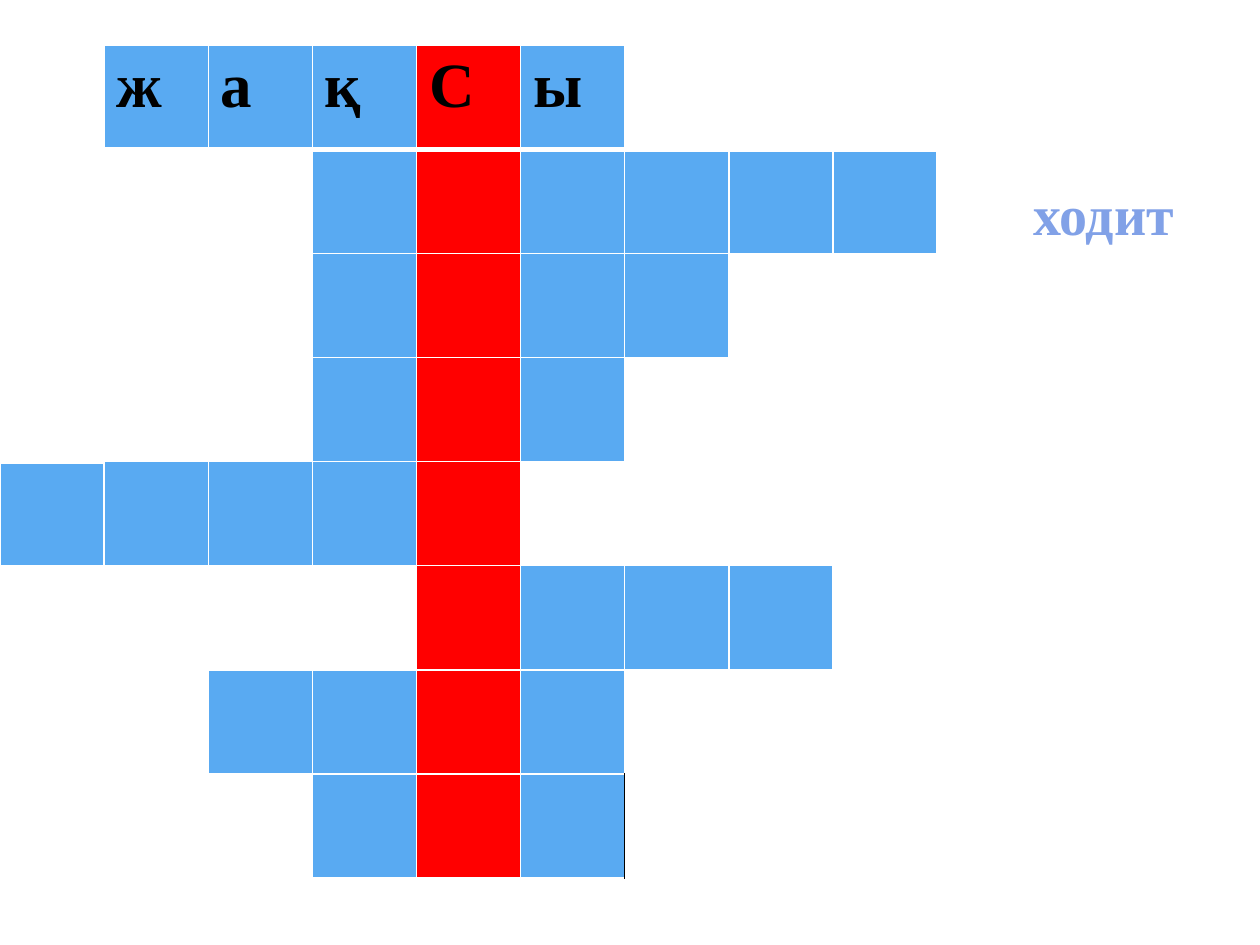
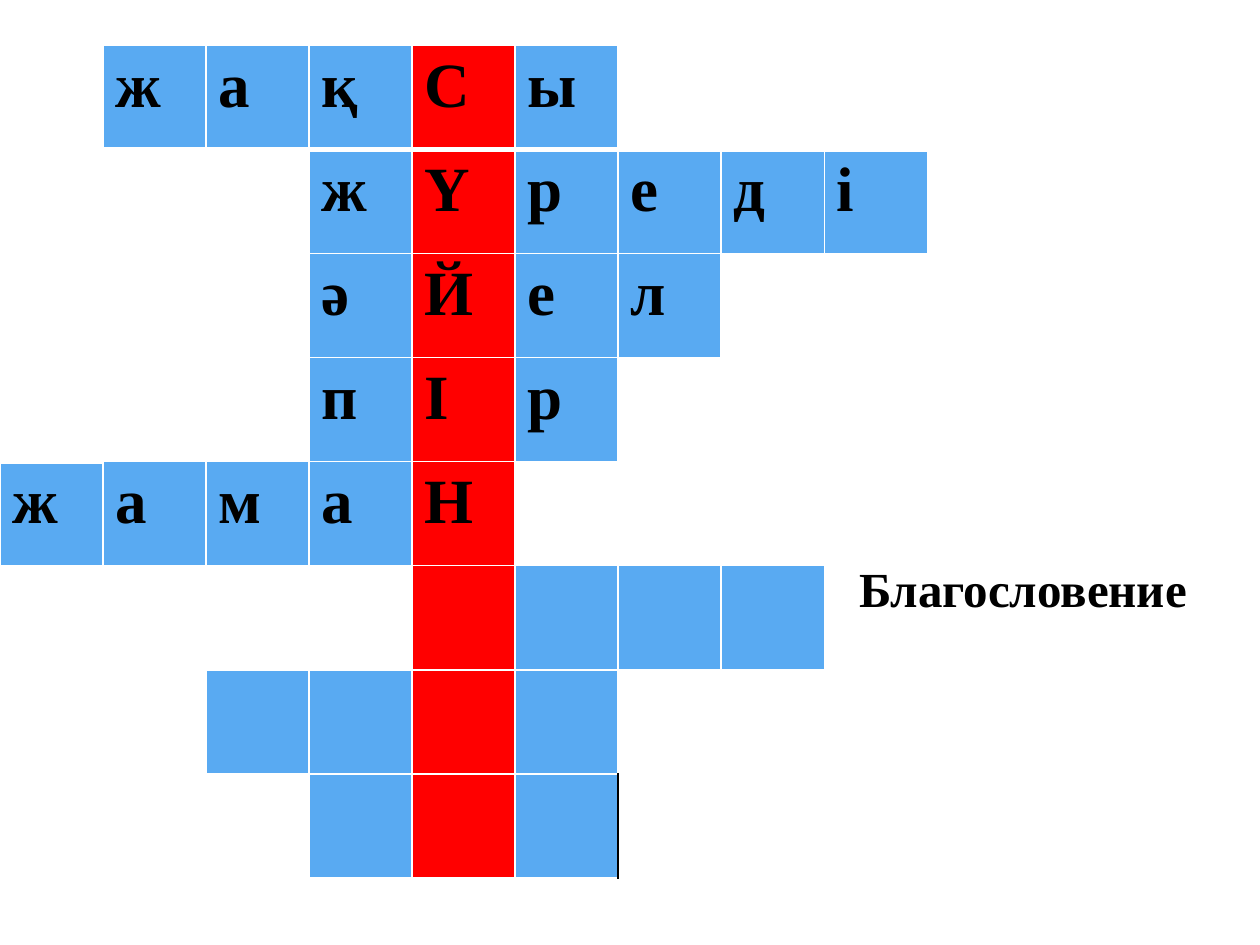
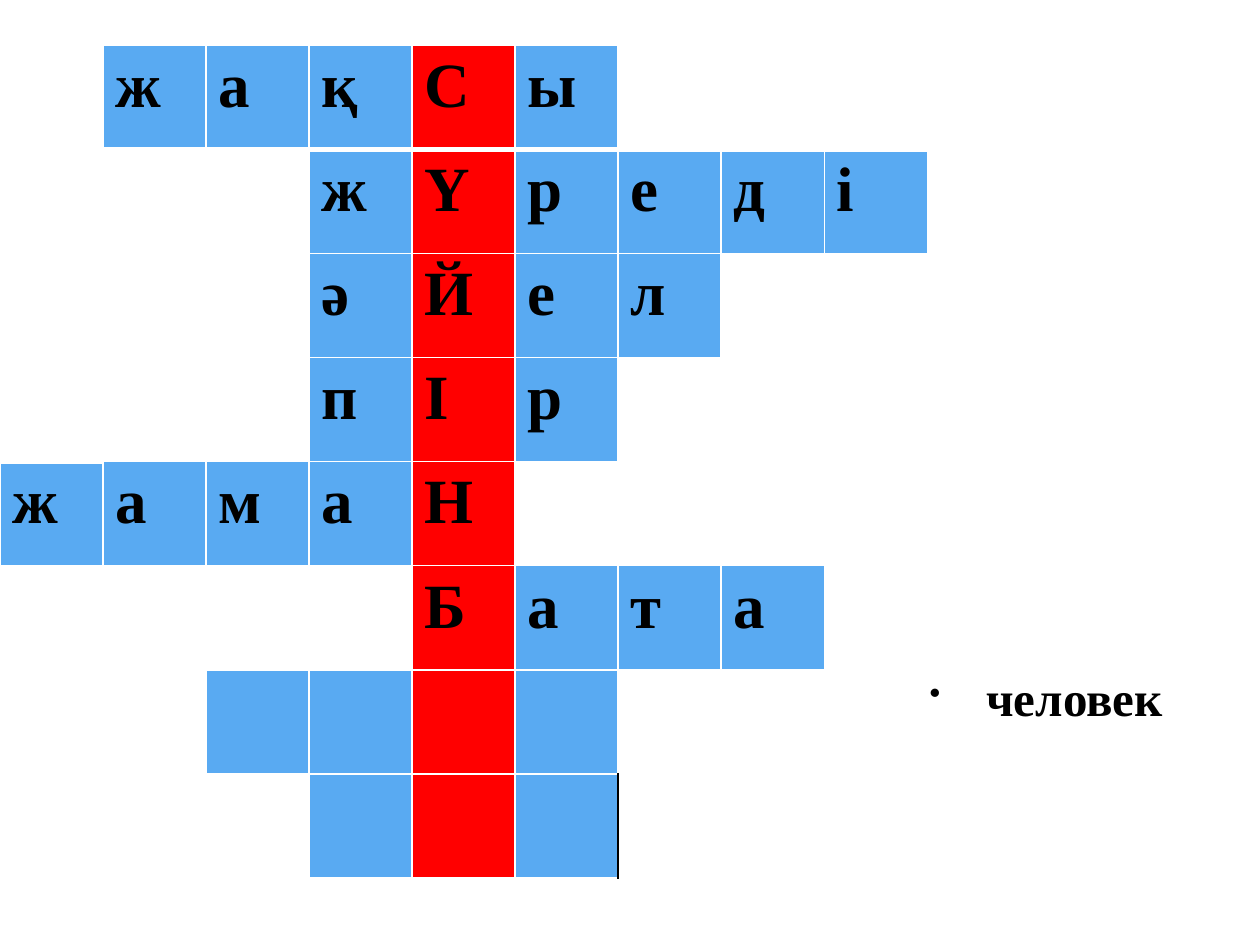
"""Builds three slides that reveal a Kazakh crossword word by word."""
import lxml.etree
import pptx
import pptx.dml.color
import pptx.enum.text
import pptx.oxml.ns
import pptx.util

Inches = pptx.util.Inches
Pt = pptx.util.Pt
qn = pptx.oxml.ns.qn
SubElement = lxml.etree.SubElement

COLORS = {
    "letter": "59AAF2",
    "keyword": "FF0000",
    "empty": "FFFFFF",
    "ink": "000000",
    "clue_light": "81A1E7",
    "clue_deep": "638FE5",
}
FONT = "Times New Roman"
KEY_COLUMN = 4
WORDS = [
    (1, 5, "жақСы"),
    (3, 6, "жҮреді"),
    (3, 4, "әЙел"),
    (3, 3, "пІр"),
    (0, 5, "жамаН"),
    (4, 4, "Бата"),
    (2, 4, ""),
    (3, 3, ""),
]
BLANK_AREAS = [
    (0, 0, 3, 0), (0, 6, 0, 8), (2, 7, 2, 8), (3, 6, 4, 7), (3, 8, 5, 8),
    (5, 0, 7, 0), (5, 1, 7, 1), (5, 2, 5, 3), (6, 7, 7, 8),
]


def rgb(name):
    return pptx.dml.color.RGBColor.from_string(COLORS[name])


def style_run(run, size):
    run.font.name = FONT
    run.font.size = Pt(size)
    run.font.bold = True
    run.font.color.rgb = rgb("ink")


deck = pptx.Presentation()
deck.slide_width = Inches(10)
deck.slide_height = Inches(7.5)

PUZZLES = [
    {"clue": "ходит", "box": (7.52, 1.07, 2.48, 1.25), "size": 32, "style": "title",
     "clue_first": True, "width": 7.44, "solved": 1, "left_gap_end": 2},
    {"clue": "Благословение", "box": (6.57, 4.38, 3.43, 2.32), "size": 28, "style": "plain",
     "clue_first": False, "width": 7.36, "solved": 5, "left_gap_end": 3},
    {"clue": "человек", "box": (7.13, 5.25, 2.37, 1.45), "size": 28, "style": "bullet",
     "clue_first": True, "width": 7.36, "solved": 6, "left_gap_end": 3},
]

for puzzle in PUZZLES:
    slide = deck.slides.add_slide(deck.slide_layouts[6])
    grid_frame = slide.shapes.add_table(8, 9, 0, Inches(0.36), Inches(puzzle["width"]), Inches(6.61))
    crossword = grid_frame.table
    crossword.first_row = False
    crossword.horz_banding = False

    for row, (start, length, answer) in enumerate(WORDS):
        for column in range(9):
            cell = crossword.cell(row, column)
            offset = column - start
            in_word = 0 <= offset < length
            if in_word and row < puzzle["solved"]:
                cell.text_frame.text = answer[offset]
                style_run(cell.text_frame.paragraphs[0].runs[0], 36)

            properties = cell._tc.get_or_add_tcPr()
            for side in "LRTB":
                thick = (row, side) in ((0, "B"), (1, "T"))
                dark = (row, column, side) in ((7, 5, "R"), (7, 6, "L"))
                border = SubElement(properties, qn(f"a:ln{side}"), w=str(Pt(3 if thick else 1)))
                paint = SubElement(border, qn("a:solidFill"))
                SubElement(paint, qn("a:srgbClr"), val=COLORS["ink" if dark else "empty"])

            if not in_word:
                fill_name = "empty"
            elif column == KEY_COLUMN:
                fill_name = "keyword"
            else:
                fill_name = "letter"
            cell.fill.solid()
            cell.fill.fore_color.rgb = rgb(fill_name)

    for top, left, bottom, right in BLANK_AREAS + [(1, 1, puzzle["left_gap_end"], 2)]:
        crossword.cell(top, left).merge(crossword.cell(bottom, right))

    clue_box = slide.shapes.add_textbox(*[Inches(length) for length in puzzle["box"]])
    clue_text = clue_box.text_frame
    clue_text.word_wrap = True
    clue_text.text = puzzle["clue"]
    paragraph = clue_text.paragraphs[0]
    clue_run = paragraph.runs[0]
    style_run(clue_run, puzzle["size"])

    if puzzle["style"] == "title":
        clue_text.vertical_anchor = pptx.enum.text.MSO_ANCHOR.MIDDLE
        paragraph.alignment = pptx.enum.text.PP_ALIGN.CENTER
        clue_run.font.fill.gradient()
        clue_run.font.fill.gradient_angle = 280
        stops = clue_run.font.fill.gradient_stops
        for stop, position, name in zip(stops, (0.73, 1), ("clue_light", "clue_deep")):
            stop.position = position
            stop.color.rgb = rgb(name)
    else:
        layout = paragraph._p.get_or_add_pPr()
        layout.set("marL", str(Inches(0.6)))
        layout.set("indent", str(Inches(-0.45)))
        SubElement(SubElement(layout, qn("a:spcBef")), qn("a:spcPct"), val="20000")
        if puzzle["style"] == "bullet":
            SubElement(SubElement(layout, qn("a:buClr")), qn("a:srgbClr"), val=COLORS["ink"])
            SubElement(layout, qn("a:buSzPct"), val="65000")
            SubElement(layout, qn("a:buChar"), char="•")
        else:
            SubElement(layout, qn("a:buNone"))

    if puzzle["clue_first"]:
        grid_frame._element.addprevious(clue_box._element)

deck.save("out.pptx")
